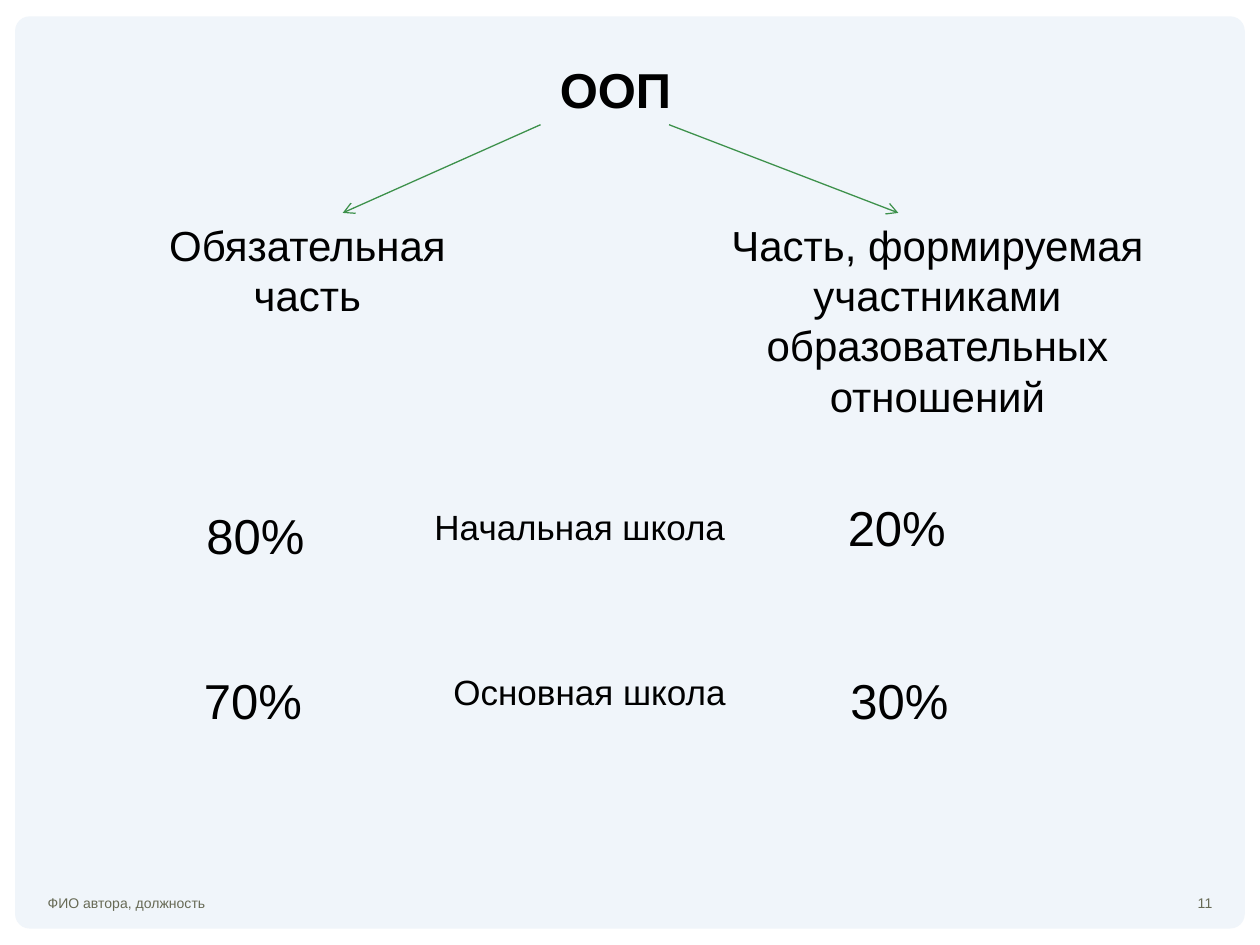
from lxml import etree
from pptx import Presentation
from pptx.dml.color import RGBColor
from pptx.enum.shapes import MSO_CONNECTOR, MSO_SHAPE
from pptx.enum.text import MSO_ANCHOR, MSO_AUTO_SIZE, PP_ALIGN
from pptx.oxml.ns import qn
from pptx.util import Inches, Pt

LEFT, CENTER, RIGHT = PP_ALIGN.LEFT, PP_ALIGN.CENTER, PP_ALIGN.RIGHT
TOP, MIDDLE = MSO_ANCHOR.TOP, MSO_ANCHOR.MIDDLE
GROW, FIXED = MSO_AUTO_SIZE.SHAPE_TO_FIT_TEXT, MSO_AUTO_SIZE.NONE
ROUNDED = MSO_SHAPE.ROUNDED_RECTANGLE
STRAIGHT = MSO_CONNECTOR.STRAIGHT

WHITE, PANEL, BLACK = "FFFFFF", "F0F5FA", "000000"
MUTED, GREEN = "676A55", "3D914B"


def color(value):
    return RGBColor.from_string(value)


class SlideBuilder:
    font_name = "Arial"

    def __init__(self, slide):
        self.slide = slide
        background = slide.background.fill
        background.solid()
        background.fore_color.rgb = color(WHITE)

    def panel(self, left, top, width, height, fill, radius):
        panel = self.slide.shapes.add_shape(
            ROUNDED, Inches(left), Inches(top), Inches(width), Inches(height))
        panel.adjustments[0] = radius
        panel.shadow.inherit = False
        panel.fill.solid()
        panel.fill.fore_color.rgb = color(fill)
        panel.line.fill.background()

    def set_text(self, shape, text, size, align, ink=BLACK, bold=False,
                 anchor=TOP, auto_size=GROW):
        frame = shape.text_frame
        frame.text = text
        frame_format = {"word_wrap": True, "auto_size": auto_size,
                        "vertical_anchor": anchor}
        for name, value in frame_format.items():
            setattr(frame, name, value)
        paragraph = frame.paragraphs[0]
        paragraph.alignment = align
        font_format = {"name": self.font_name, "size": Pt(size), "bold": bold}
        for name, value in font_format.items():
            setattr(paragraph.font, name, value)
        paragraph.font.color.rgb = color(ink)

    def title(self, text, left, top, width, height, size):
        title = self.slide.shapes.title
        place = {"left": left, "top": top, "width": width, "height": height}
        for name, value in place.items():
            setattr(title, name, Inches(value))
        self.set_text(title, text, size, CENTER, bold=True)

    def text(self, text, left, top, width, height, size, align=LEFT, **style):
        box = self.slide.shapes.add_textbox(
            Inches(left), Inches(top), Inches(width), Inches(height))
        self.set_text(box, text, size, align, **style)

    def arrow(self, start, end):
        arrow = self.slide.shapes.add_connector(
            STRAIGHT, *(Inches(value) for value in (*start, *end)))
        arrow.line.color.rgb = color(GREEN)
        arrow.line.width = Pt(0.75)
        properties = arrow._element.spPr
        line = properties.find(qn("a:ln"))
        etree.SubElement(line, qn("a:tailEnd"), type="arrow")
        etree.SubElement(properties, qn("a:effectLst"))


def main():
    presentation = Presentation()
    presentation.slide_width = Inches(10)
    presentation.slide_height = Inches(7.5)
    title_only = presentation.slide_layouts[5]
    builder = SlideBuilder(presentation.slides.add_slide(title_only))

    # Panel behind the content; the title is moved in front of it
    builder.panel(0.12, 0.13, 9.76, 7.24, PANEL, 0.016)
    shape_tree = builder.slide.shapes._spTree
    shape_tree.append(builder.slide.shapes.title._element)

    # Footer
    footer = {"size": 8, "ink": MUTED, "anchor": MIDDLE, "auto_size": FIXED}
    builder.text("ФИО автора, должность", 0.28, 6.97, 8.43, 0.4, **footer)
    builder.text("11", 8.7, 6.97, 1.02, 0.4, align=RIGHT, **footer)

    # Programme and its two parts
    builder.title("ООП", 4.06, 0.42, 1.65, 0.57, 28)
    parts_top = 1.69
    builder.text("Обязательная часть", 1.14, parts_top, 2.6, 0.91, 24, CENTER)
    builder.text("Часть, формируемая участниками образовательных отношений",
                 5.55, parts_top, 3.78, 1.72, 24, CENTER)

    # Shares by school level: each entry is text, left, top
    school_levels = [("Начальная школа", 3.35, 3.96),
                     ("Основная школа", 3.5, 5.27)]
    shares = [("80%", 1.54, 3.96), ("20%", 6.63, 3.9),
              ("70%", 1.52, 5.27), ("30%", 6.65, 5.27)]
    for level, left, top in school_levels:
        builder.text(level, left, top, 2.6, 0.44, 20)
    for share, left, top in shares:
        builder.text(share, left, top, 1.18, 0.57, 28)

    # Arrows from the programme to its parts
    for start_x, end_x in [(4.29, 2.72), (5.31, 7.13)]:
        builder.arrow((start_x, 0.99), (end_x, parts_top))

    presentation.save("out.pptx")


if __name__ == "__main__":
    main()
